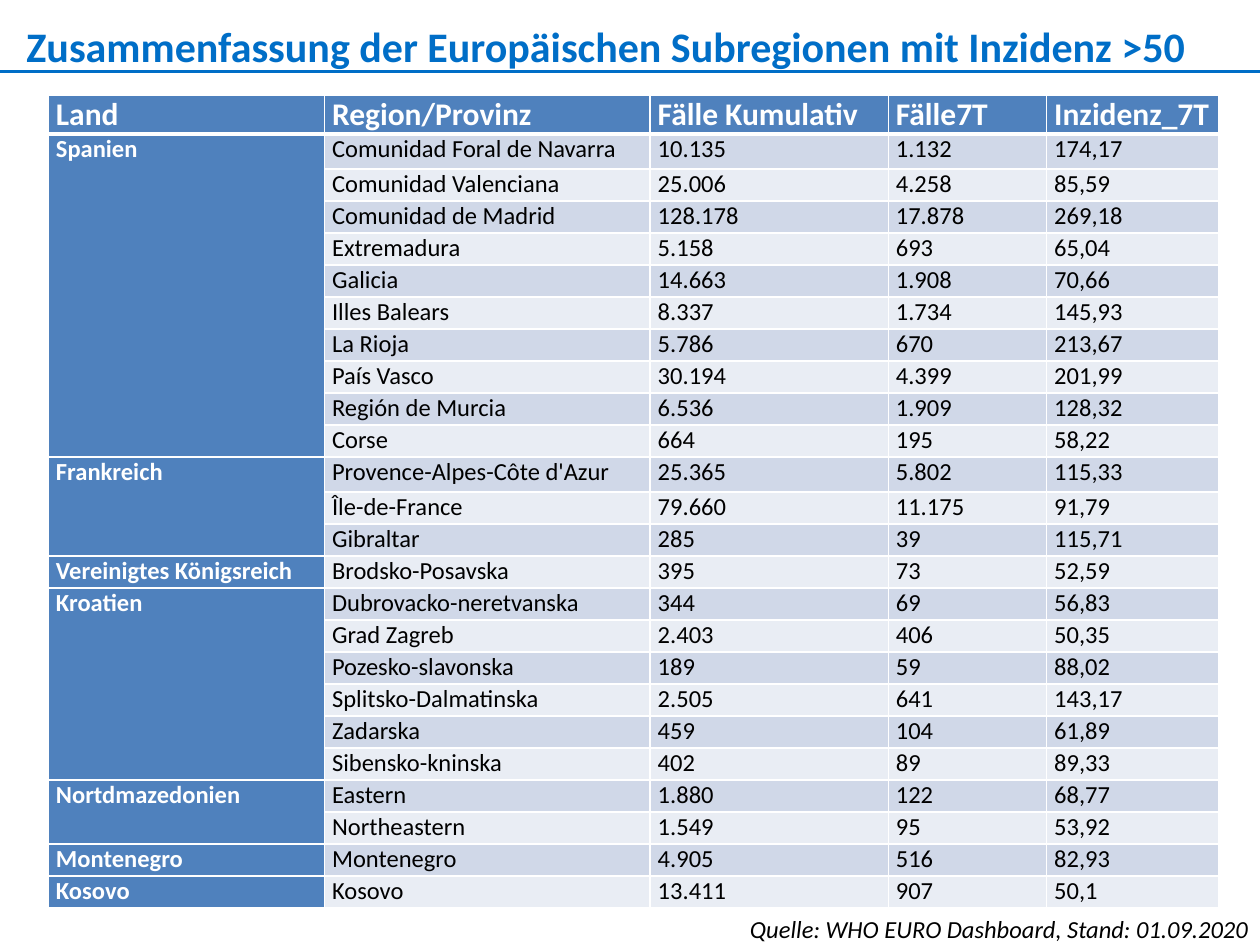
from lxml import etree
from pptx import Presentation
from pptx.dml.color import RGBColor
from pptx.enum import shapes, text
from pptx.oxml import ns
from pptx.util import Pt

FONT = "Calibri"
BLUE, HEAD, WHITE, BLACK = "006EC7", "4F81BD", "FFFFFF", "000000"
BANDS = ["D0D8E8", "E9EDF4"]
TABLE_LEFT, TABLE_TOP = 27.7, 54.6
COLUMN_WIDTHS = [157.8, 186.1, 136.1, 90.5, 98.3]
HEADER_HEIGHT, TALL_HEIGHT, ROW_HEIGHT = 22, 20, 18.3
HEADINGS = ["Land", "Region/Provinz", "Fälle Kumulativ", "Fälle7T", "Inzidenz_7T"]
COUNTRIES = [
    ("Spanien", [
        ("Comunidad Foral de Navarra", "10.135", "1.132", "174,17"),
        ("Comunidad Valenciana", "25.006", "4.258", "85,59"),
        ("Comunidad de Madrid", "128.178", "17.878", "269,18"),
        ("Extremadura", "5.158", "693", "65,04"),
        ("Galicia", "14.663", "1.908", "70,66"),
        ("Illes Balears", "8.337", "1.734", "145,93"),
        ("La Rioja", "5.786", "670", "213,67"),
        ("País Vasco", "30.194", "4.399", "201,99"),
        ("Región de Murcia", "6.536", "1.909", "128,32"),
        ("Corse", "664", "195", "58,22"),
    ]),
    ("Frankreich", [
        ("Provence-Alpes-Côte d'Azur", "25.365", "5.802", "115,33"),
        ("Île-de-France", "79.660", "11.175", "91,79"),
        ("Gibraltar", "285", "39", "115,71"),
    ]),
    ("Vereinigtes Königsreich", [
        ("Brodsko-Posavska", "395", "73", "52,59"),
    ]),
    ("Kroatien", [
        ("Dubrovacko-neretvanska", "344", "69", "56,83"),
        ("Grad Zagreb", "2.403", "406", "50,35"),
        ("Pozesko-slavonska", "189", "59", "88,02"),
        ("Splitsko-Dalmatinska", "2.505", "641", "143,17"),
        ("Zadarska", "459", "104", "61,89"),
        ("Sibensko-kninska", "402", "89", "89,33"),
    ]),
    ("Nortdmazedonien", [
        ("Eastern", "1.880", "122", "68,77"),
        ("Northeastern", "1.549", "95", "53,92"),
    ]),
    ("Montenegro", [
        ("Montenegro", "4.905", "516", "82,93"),
    ]),
    ("Kosovo", [
        ("Kosovo", "13.411", "907", "50,1"),
    ]),
]
TALL_REGIONS = ["Comunidad Foral de Navarra", "Provence-Alpes-Côte d'Azur"]


def rgb(value):
    return RGBColor.from_string(value)


def write(frame, words, size=14, color=BLACK, bold=False, italic=False,
          align=text.PP_ALIGN.LEFT):
    paragraph = frame.paragraphs[0]
    paragraph.alignment = align
    run = paragraph.add_run()
    run.text = words
    font = run.font
    font.name, font.size, font.bold, font.italic = FONT, Pt(size), bold, italic
    font.color.rgb = rgb(color)


def add_heading(slide):
    heading = slide.shapes.title
    heading.left, heading.top = Pt(15.1), Pt(11.5)
    heading.width, heading.height = Pt(693.4), Pt(29)
    frame = heading.text_frame
    frame.margin_left = frame.margin_right = frame.margin_top = frame.margin_bottom = 0
    frame.vertical_anchor = text.MSO_ANCHOR.TOP
    frame.word_wrap = True
    frame.auto_size = text.MSO_AUTO_SIZE.NONE
    write(frame, "Zusammenfassung der Europäischen Subregionen mit Inzidenz >50",
          size=24, color=BLUE, bold=True)


def add_rule(slide):
    rule = slide.shapes.add_connector(
        shapes.MSO_CONNECTOR.STRAIGHT, Pt(0), Pt(41), Pt(720), Pt(41))
    rule.line.color.rgb = rgb(BLUE)
    rule.line.width = Pt(1.5)
    etree.SubElement(rule._element.spPr, ns.qn("a:effectLst"))


def add_source(slide):
    source = slide.shapes.add_textbox(Pt(388), Pt(519), Pt(332.6), Pt(24.3))
    source.text_frame.word_wrap = True
    write(source.text_frame, "Quelle: WHO EURO Dashboard, Stand: 01.09.2020",
          italic=True, align=text.PP_ALIGN.RIGHT)


def draw_borders(cell, top=1, bottom=1):
    properties = cell._tc.get_or_add_tcPr()
    for side, width in (("L", 1), ("R", 1), ("T", top), ("B", bottom)):
        border = etree.SubElement(properties, ns.qn("a:ln" + side), w=str(Pt(width)))
        fill = etree.SubElement(border, ns.qn("a:solidFill"))
        etree.SubElement(fill, ns.qn("a:srgbClr"), val=WHITE)


def format_cell(cell, fill, **borders):
    draw_borders(cell, **borders)
    cell.fill.solid()
    cell.fill.fore_color.rgb = rgb(fill)
    cell.margin_left = cell.margin_right = Pt(4.3)
    cell.margin_top = cell.margin_bottom = 0
    cell.vertical_anchor = text.MSO_ANCHOR.TOP


def add_incidence_table(slide):
    heights = [HEADER_HEIGHT] + [
        TALL_HEIGHT if region[0] in TALL_REGIONS else ROW_HEIGHT
        for _, regions in COUNTRIES for region in regions]
    table = slide.shapes.add_table(
        len(heights), len(HEADINGS), Pt(TABLE_LEFT), Pt(TABLE_TOP),
        Pt(sum(COLUMN_WIDTHS)), Pt(sum(heights))).table
    for column, width in zip(table.columns, COLUMN_WIDTHS):
        column.width = Pt(width)
    for row, height in zip(table.rows, heights):
        row.height = Pt(height)

    for column, heading in enumerate(HEADINGS):
        cell = table.cell(0, column)
        format_cell(cell, HEAD, bottom=3)
        write(cell.text_frame, heading, size=18, color=WHITE, bold=True)

    row = 1
    for country, regions in COUNTRIES:
        first = table.cell(row, 0)
        write(first.text_frame, country, color=WHITE, bold=True)
        if len(regions) > 1:
            first.merge(table.cell(row + len(regions) - 1, 0))
        for region in regions:
            top = 3 if row == 1 else 1
            format_cell(table.cell(row, 0), HEAD, top=top)
            for column, value in enumerate(region, 1):
                cell = table.cell(row, column)
                format_cell(cell, BANDS[(row - 1) % 2], top=top)
                write(cell.text_frame, value)
            row += 1


def main():
    deck = Presentation()
    deck.slide_width, deck.slide_height = Pt(720), Pt(540)
    slide = deck.slides.add_slide(deck.slide_layouts[5])
    add_heading(slide)
    add_rule(slide)
    add_source(slide)
    add_incidence_table(slide)
    deck.save("out.pptx")


if __name__ == "__main__":
    main()
